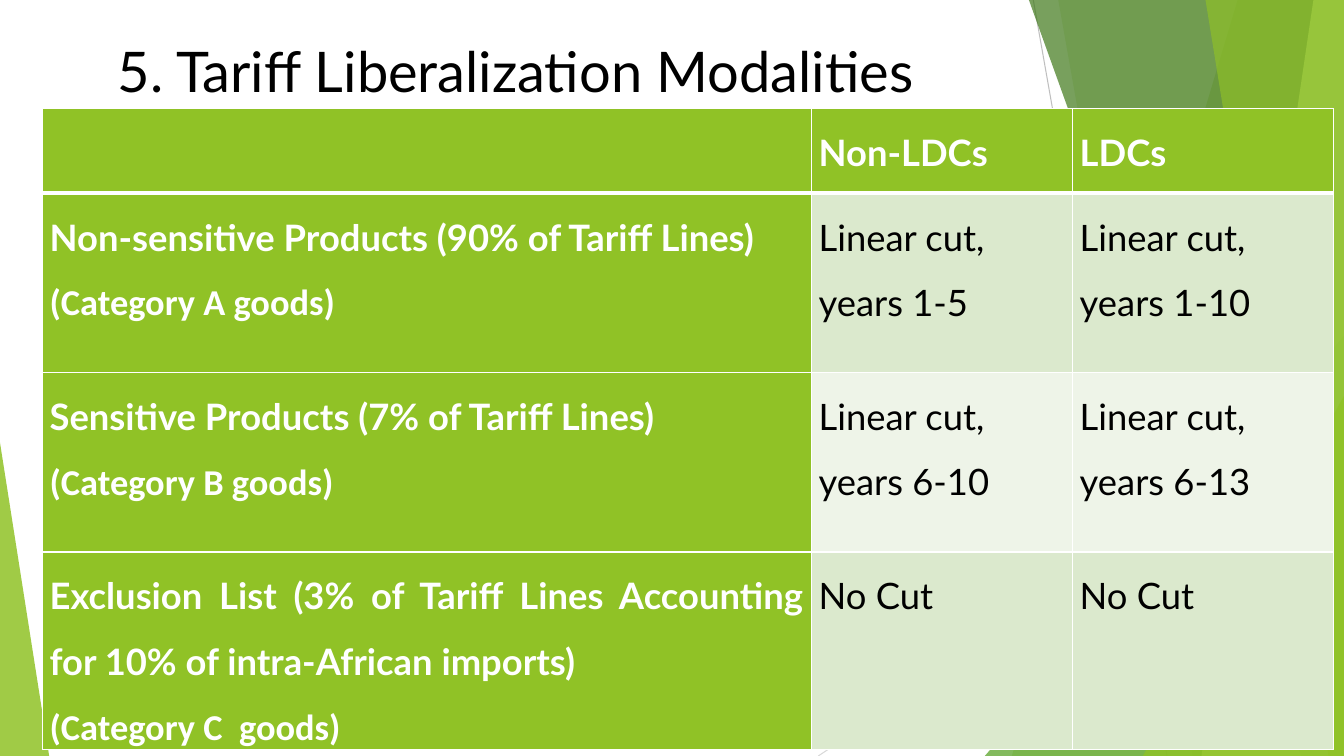
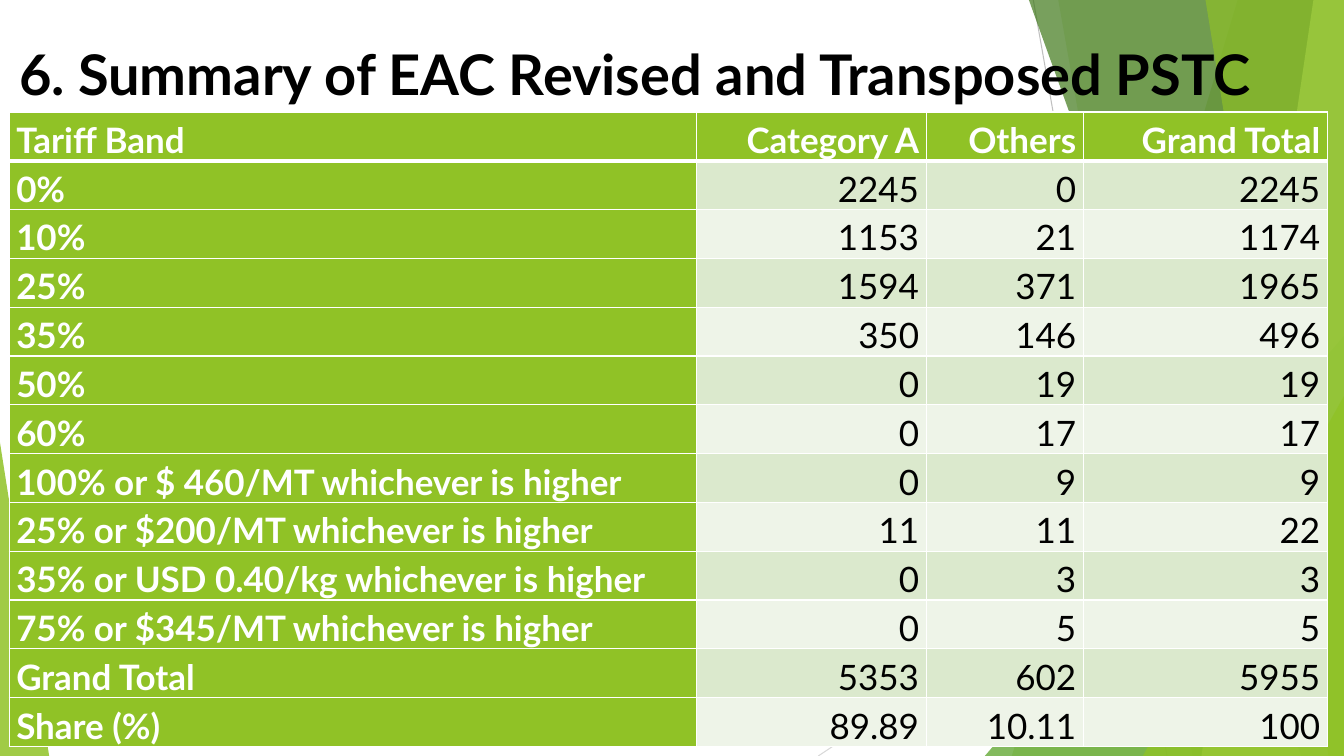
from lxml.etree import SubElement
from pptx import Presentation
from pptx.dml.color import RGBColor
from pptx.enum.shapes import MSO_CONNECTOR, MSO_SHAPE
from pptx.enum.text import MSO_ANCHOR, MSO_AUTO_SIZE, PP_ALIGN
from pptx.oxml.ns import qn
from pptx.util import Cm, Pt

WIDE, HIGH = 33.87, 19.05
FONT, NOTE = "Lato", "Calibri"
BLACK = RGBColor(0x00, 0x00, 0x00)
WHITE = RGBColor(0xFF, 0xFF, 0xFF)
LIME = RGBColor(0x90, 0xC2, 0x26)
LEAF = RGBColor(0x54, 0xA0, 0x21)
MOSS = RGBColor(0x3F, 0x78, 0x19)
PALE = RGBColor(0xC0, 0xE4, 0x74)
GREY = RGBColor(0xBF, 0xBF, 0xBF)
MIST = RGBColor(0xD9, 0xD9, 0xD9)
BANDS = (RGBColor(0xDB, 0xE9, 0xCD), RGBColor(0xEE, 0xF4, 0xE8))

LEFT, RIGHT, JUST = PP_ALIGN.LEFT, PP_ALIGN.RIGHT, PP_ALIGN.JUSTIFY

TERMS = [
    ("", "Non-LDCs", "LDCs"),
    ("Non-sensitive Products (90% of Tariff Lines)\n(Category A goods)",
     "Linear cut, years 1-5", "Linear cut, years 1-10"),
    ("Sensitive Products (7% of Tariff Lines)\n(Category B goods)",
     "Linear cut, years 6-10", "Linear cut, years 6-13"),
    ("Exclusion List (3% of Tariff Lines Accounting for 10% of "
     "intra-African imports)\n(Category C  goods)", "No Cut", "No Cut"),
]

# Tariff band, lines in category A, other lines
LINES = [
    ("0%", 2245, 0),
    ("10%", 1153, 21),
    ("25%", 1594, 371),
    ("35%", 350, 146),
    ("50%", 0, 19),
    ("60%", 0, 17),
    ("100% or $ 460/MT whichever is higher", 0, 9),
    ("25% or $200/MT whichever is higher", 11, 11),
    ("35% or USD 0.40/kg whichever is higher", 0, 3),
    ("75% or $345/MT whichever is higher", 0, 5),
]


def tint(shape, color, alpha):
    """Fill a shape with a see-through colour; alpha is percent opaque."""
    shape.shadow.inherit = False
    shape.line.fill.background()
    shape.fill.solid()
    shape.fill.fore_color.rgb = color
    node = shape.element.spPr.find(".//" + qn("a:srgbClr"))
    SubElement(node, qn("a:alpha"), val=str(alpha * 1000))


def line(slide, x1, y1, x2, y2, color):
    link = slide.shapes.add_connector(
        MSO_CONNECTOR.STRAIGHT, Cm(x1), Cm(y1), Cm(x2), Cm(y2))
    link.line.color.rgb = color
    link.line.width = Pt(0.75)
    SubElement(link.element.spPr, qn("a:effectLst"))


def shard(slide, top, low, color, alpha):
    """Fill the right part of the slide from a slanted edge, top x to low x."""
    pen = slide.shapes.build_freeform(Cm(top), 0)
    pen.add_line_segments(
        [(Cm(WIDE), 0), (Cm(WIDE), Cm(HIGH)), (Cm(low), Cm(HIGH))])
    tint(pen.convert_to_shape(), color, alpha)


def wedge(slide, left, top, width, apex, color, alpha):
    """Stand a triangle on the slide's lower edge; apex 0 is left, 1 right."""
    shape = slide.shapes.add_shape(
        MSO_SHAPE.ISOSCELES_TRIANGLE,
        Cm(left), Cm(top), Cm(width), Cm(HIGH - top))
    shape.adjustments[0] = apex
    tint(shape, color, alpha)


def facets(slide):
    line(slide, 26.04, 0, 29.41, HIGH, GREY)
    line(slide, WIDE, 10.24, 20.62, HIGH, MIST)
    shard(slide, 31.19, 25.5, LIME, 30)
    shard(slide, 26.67, 30.05, LIME, 20)
    wedge(slide, 24.82, 8.46, 9.05, 1, LEAF, 72)
    shard(slide, 25.93, 32.79, MOSS, 70)
    shard(slide, 33.1, 30.28, PALE, 70)
    shard(slide, 30.38, 33.48, LIME, 65)
    wedge(slide, 28.8, 9.98, 5.07, 1, LIME, 80)
    wedge(slide, 0, 11.15, 1.24, 0, LIME, 85)


def write(para, text, size, color, bold, font=FONT):
    run = para.add_run()
    run.text = text
    run.font.size = Pt(size)
    run.font.name = font
    run.font.bold = bold
    run.font.color.rgb = color


def title(slide, text, left, top, width, bold=False):
    box = slide.shapes.add_textbox(Cm(left), Cm(top), Cm(width), Cm(1.96))
    frame = box.text_frame
    frame.word_wrap = True
    frame.auto_size = MSO_AUTO_SIZE.SHAPE_TO_FIT_TEXT
    frame.vertical_anchor = MSO_ANCHOR.MIDDLE
    write(frame.paragraphs[0], text, 40, BLACK, bold)


def edge(cell, row):
    """Draw white cell borders, thick between the head and the body."""
    props = cell._tc.get_or_add_tcPr()
    thick = {"T": row == 1, "B": row == 0}
    for side in "LRTB":
        width = Pt(3 if thick.get(side) else 1)
        rule = SubElement(props, qn("a:ln" + side), w=str(width))
        fill = SubElement(rule, qn("a:solidFill"))
        SubElement(fill, qn("a:srgbClr"), val=str(WHITE))


def grid(slide, left, top, widths, heights, rows, size, aligns, anchor, space):
    """Add a table with a green head row and first column, banded elsewhere."""
    table = slide.shapes.add_table(
        len(rows), len(widths), Cm(left), Cm(top),
        Cm(sum(widths)), Cm(sum(heights))).table
    for col, width in zip(table.columns, widths):
        col.width = Cm(width)
    for r, (texts, height) in enumerate(zip(rows, heights)):
        table.rows[r].height = Cm(height)
        for c, (text, align) in enumerate(zip(texts, aligns)):
            cell = table.cell(r, c)
            head = r == 0 or c == 0
            edge(cell, r)
            cell.fill.solid()
            cell.fill.fore_color.rgb = LIME if head else BANDS[(r - 1) % 2]
            cell.margin_left = cell.margin_right = Cm(0.18)
            cell.margin_top = cell.margin_bottom = 0
            cell.vertical_anchor = anchor
            frame = cell.text_frame
            for n, part in enumerate(text.splitlines()):
                para = frame.add_paragraph() if n else frame.paragraphs[0]
                para.alignment = align
                para.line_spacing = space
                write(para, part, size, WHITE if head else BLACK, head,
                      NOTE if n else FONT)


def tally():
    """Return the summary rows, with totals and shares worked out."""
    sums = [sum(vals) for vals in list(zip(*LINES))[1:]]
    full = sum(sums)
    rows = [("Tariff Band", "Category A", "Others", "Grand Total")]
    for name, main_part, rest in LINES + [("Grand Total", *sums)]:
        rows.append((name, str(main_part), str(rest), str(main_part + rest)))
    shares = [f"{100 * val / full:.4g}" for val in (*sums, full)]
    return rows + [("Share (%)", *shares)]


def terms(slide):
    grid(slide, 1.07, 2.74, (19.38, 6.58, 6.58), [2.13] + [4.52] * 3, TERMS,
         26, (JUST, LEFT, LEFT), MSO_ANCHOR.TOP, 1.5)
    title(slide, "5. Tariff Liberalization Modalities", 2.72, 0.79, 24.64)


def totals(slide):
    rows = tally()
    grid(slide, 0.23, 2.82, (17.32, 5.79, 3.96, 6.15), [1.23] * len(rows),
         rows, 25, (LEFT, RIGHT, RIGHT, RIGHT), MSO_ANCHOR.BOTTOM, 1.0)
    title(slide, "6. Summary of EAC Revised and Transposed PSTC",
          0.23, 0.86, 32.94, bold=True)


def main():
    deck = Presentation()
    deck.slide_width, deck.slide_height = Cm(WIDE), Cm(HIGH)
    for build in (terms, totals):
        slide = deck.slides.add_slide(deck.slide_layouts[6])
        facets(slide)
        build(slide)
    deck.save("out.pptx")


if __name__ == "__main__":
    main()
